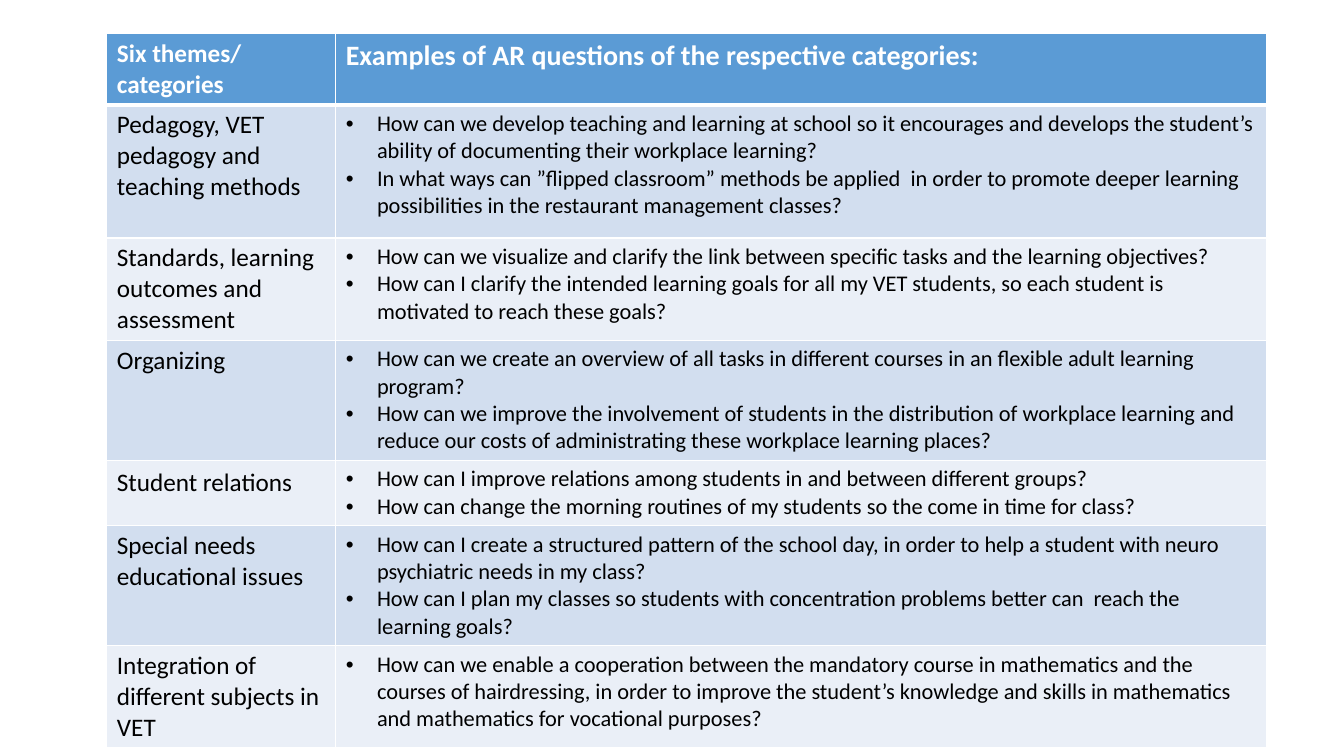
"""Build a slide with a table of action research themes and example questions."""
import pptx
import pptx.dml.color
import pptx.oxml
import pptx.oxml.ns
import pptx.util
from pptx.util import Inches

COLORS = {
    "header": "5B9BD5",
    "odd": "D2DEEF",
    "even": "EAEFF7",
    "border": "FFFFFF",
    "header_text": "FFFFFF",
    "body_text": "000000",
}

FORMATS = {
    "header_theme": {"size": pptx.util.Pt(18), "bold": True},
    "header_questions": {"size": pptx.util.Pt(20), "bold": True},
    "theme": {"size": pptx.util.Pt(18), "bold": False},
    "question": {"size": pptx.util.Pt(16), "bold": False},
}

HEADINGS = ("Six themes/\vcategories", "Examples of AR questions of the respective categories:")
HEADER_HEIGHT = 0.7
COLUMN_WIDTHS = (2.27, 9.23)

THEMES = [
    ("Pedagogy, VET pedagogy and teaching methods", 1.32, [
        "How can we develop teaching and learning at school so it encourages and develops "
        "the student’s ability of documenting their workplace learning?",
        "In what ways can ”flipped classroom” methods be applied  in order to promote deeper "
        "learning possibilities in the restaurant management classes?",
    ]),
    ("Standards, learning outcomes and assessment", 1.01, [
        "How can we visualize and clarify the link between specific tasks and the learning objectives?",
        "How can I clarify the intended learning goals for all my VET students, so each student is "
        "motivated to reach these goals?",
    ]),
    ("Organizing", 1.19, [
        "How can we create an overview of all tasks in different courses in an flexible adult "
        "learning program?",
        "How can we improve the involvement of students in the distribution of workplace learning "
        "and reduce our costs of administrating these workplace learning places?",
    ]),
    ("Student relations", 0.65, [
        "How can I improve relations among students in and between different groups?",
        "How can change the morning routines of my students so the come in time for class?",
    ]),
    ("Special needs educational issues", 1.19, [
        "How can I create a structured pattern of the school day, in order to help a student with "
        "neuro psychiatric needs in my class?",
        "How can I plan my classes so students with concentration problems better can  reach the "
        "learning goals?",
    ]),
    ("Integration of different subjects in VET", 1.01, [
        "How can we enable a cooperation between the mandatory course in mathematics and the "
        "courses of hairdressing, in order to improve the student’s knowledge and skills in "
        "mathematics and mathematics for vocational purposes?",
    ]),
]


def rgb(name):
    """Return the named colour."""
    return pptx.dml.color.RGBColor.from_string(COLORS[name])


def add_bullet(paragraph):
    """Give a paragraph a hanging bullet."""
    properties = paragraph._p.get_or_add_pPr()
    indent = Inches(0.31)
    properties.set("marL", str(indent))
    properties.set("indent", str(-indent))
    for markup in ('<a:buFont {} typeface="Arial"/>', '<a:buChar {} char="•"/>'):
        properties.append(pptx.oxml.parse_xml(markup.format(pptx.oxml.ns.nsdecls("a"))))


def add_borders(cell, bottom_width):
    """Draw the four borders of a cell."""
    properties = cell._tc.get_or_add_tcPr()
    widths = {"lnL": 1, "lnR": 1, "lnT": 1, "lnB": bottom_width}
    for position, (side, width) in enumerate(widths.items()):
        border = pptx.oxml.parse_xml(
            f'<a:{side} {pptx.oxml.ns.nsdecls("a")} w="{pptx.util.Pt(width)}">'
            f'<a:solidFill><a:srgbClr val="{COLORS["border"]}"/></a:solidFill></a:{side}>'
        )
        properties.insert(position, border)


def fill_cell(cell, lines, style, fill, text_color="body_text", bottom_width=1):
    """Write formatted paragraphs into a cell with fill and borders."""
    cell.fill.solid()
    cell.fill.fore_color.rgb = rgb(fill)
    add_borders(cell, bottom_width)
    frame = cell.text_frame
    for number, line in enumerate(lines):
        paragraph = frame.add_paragraph() if number else frame.paragraphs[0]
        paragraph.text = line
        if style == "question":
            add_bullet(paragraph)
        for run in paragraph.runs:
            run.font.name = "Calibri"
            run.font.color.rgb = rgb(text_color)
            for attribute, value in FORMATS[style].items():
                setattr(run.font, attribute, value)


def add_theme_table(slide):
    """Add the table of themes and their questions."""
    heights = [HEADER_HEIGHT] + [height for _, height, _ in THEMES]
    themes_table = slide.shapes.add_table(
        len(heights), len(COLUMN_WIDTHS), Inches(1.06), Inches(0.33),
        Inches(sum(COLUMN_WIDTHS)), Inches(sum(heights)),
    ).table
    for column, width in zip(themes_table.columns, COLUMN_WIDTHS):
        column.width = Inches(width)
    for row, height in zip(themes_table.rows, heights):
        row.height = Inches(height)

    for column, (heading, style) in enumerate(zip(HEADINGS, ("header_theme", "header_questions"))):
        fill_cell(themes_table.cell(0, column), [heading], style, "header", "header_text", 3)
    for row, (theme, _, questions) in enumerate(THEMES, start=1):
        band = "odd" if row % 2 else "even"
        fill_cell(themes_table.cell(row, 0), [theme], "theme", band)
        fill_cell(themes_table.cell(row, 1), questions, "question", band)
        if theme == "Student relations":
            themes_table.cell(row, 0).text_frame.paragraphs[0].line_spacing = 1.07


def main():
    """Create and save the presentation."""
    presentation = pptx.Presentation()
    presentation.slide_width = Inches(13.33)
    presentation.slide_height = Inches(7.5)
    slide = presentation.slides.add_slide(presentation.slide_layouts.get_by_name("Blank"))
    add_theme_table(slide)
    presentation.save("out.pptx")


if __name__ == "__main__":
    main()
